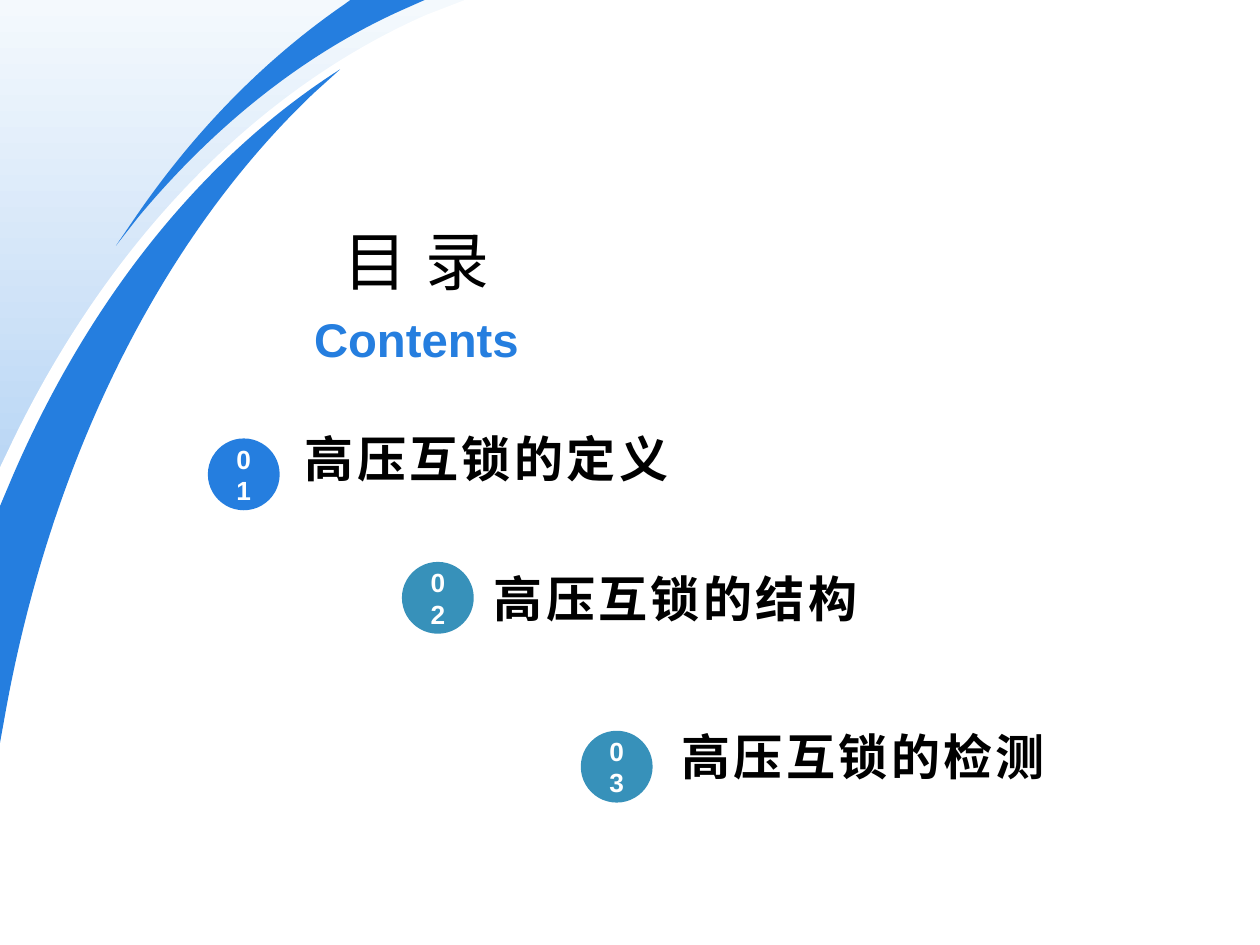
from lxml.etree import SubElement
from pptx import Presentation
from pptx.dml.color import RGBColor
from pptx.enum.shapes import MSO_SHAPE
from pptx.enum.text import MSO_ANCHOR as Anchor, MSO_AUTO_SIZE as AutoSize, PP_ALIGN as Align
from pptx.oxml.ns import qn
from pptx.util import Inches, Pt

# Content: number, colour, circle position, label, label position, label font
BLUE, TEAL, BLACK, WHITE = "257EDF", "3791BA", "000000", "FFFFFF"
LATIN, CJK = "Arial", "Noto Sans CJK SC"
TITLE, SUBTITLE = "目录", "Contents"
ITEMS = [
    ("01", BLUE, (1.65, 3.48), "高压互锁的定义", (2.32, 3.35), LATIN),
    ("02", TEAL, (3.19, 4.46), "高压互锁的结构", (3.82, 4.46), CJK),
    ("03", TEAL, (4.61, 5.80), "高压互锁的检测", (5.31, 5.72), CJK),
]
CIRCLE = 0.57
LABEL_SIZE = (3.15, 0.43)
BACKGROUND = [(0, "F4F9FD"), (74, "9DC5F1"), (83, "9DC5F1"), (100, "BED8F5")]

# Outlines in inches: two numbers are a line end, six are a Bezier curve
WHITE_PAGE = [(3.69, 0), (10.01, 0), (10.01, 7.5), (-0.01, 7.5), (-0.01, 3.73),
              (0.11, 3.48), (0.87, 1.92, 2.02, 0.72, 3.38, 0.12)]
LOWER_SWOOSH = [(2.7, 0.55), (2.49, 0.74), (1.28, 1.89, 0.39, 3.66, 0.03, 5.73),
                (-0.01, 5.95), (-0.01, 4.04), (0.1, 3.78),
                (0.7, 2.39, 1.6, 1.25, 2.7, 0.55)]
UPPER_SWOOSH = [(2.78, 0), (3.37, 0), (3.19, 0.08), (2.41, 0.43, 1.7, 1, 1.1, 1.72),
                (0.92, 1.95), (1.05, 1.76), (1.53, 1.05, 2.1, 0.47, 2.74, 0.03)]
OUTLINES = [(WHITE_PAGE, WHITE), (LOWER_SWOOSH, BLUE), (UPPER_SWOOSH, BLUE)]


def color(value):
    return RGBColor.from_string(value)


def paint(shape, fill):
    shape.shadow.inherit = False
    shape.fill.solid()
    shape.fill.fore_color.rgb = color(fill)
    shape.line.fill.background()


def add_outline(slide, outline):
    """Build a freeform of lines, then bend the steps that are curves."""
    steps = [tuple(map(Inches, step)) for step in outline]
    builder = slide.shapes.build_freeform(*steps[0])
    builder.add_line_segments([step[-2:] for step in steps[1:]], close=True)
    shape = builder.convert_to_shape()
    segments = list(shape._element.iter(qn("a:lnTo")))
    for segment, step in zip(segments, steps[1:]):
        if len(step) == 6:
            curve = SubElement(segment.getparent(), qn("a:cubicBezTo"))
            for x, y in zip(step[::2], step[1::2]):
                SubElement(curve, qn("a:pt"), x=str(x - shape.left), y=str(y - shape.top))
            segment.getparent().replace(segment, curve)
    return shape


def write(shape, text, size, fill, font=LATIN, bold=False, align=Align.LEFT,
          anchor=Anchor.TOP, spacing=0):
    frame = shape.text_frame
    frame.text = text
    frame.word_wrap = True
    frame.auto_size = AutoSize.NONE
    frame.vertical_anchor = anchor
    para = frame.paragraphs[0]
    para.alignment = align
    span = para.runs[0]
    span.font.size = Pt(size)
    span.font.name = font
    span.font.bold = bold
    span.font.color.rgb = color(fill)
    properties = span.font._element
    SubElement(properties, qn("a:ea")).set("typeface", CJK)
    if spacing:
        properties.set("spc", str(spacing * 100))
    return frame


def add_box(slide, left, top, width, height):
    return slide.shapes.add_textbox(*map(Inches, (left, top, width, height)))


def set_background(slide):
    fill = slide.background.fill
    fill.gradient()
    fill.gradient_angle = 270
    stops = slide.element.find(".//" + qn("a:gsLst"))
    for stop in list(stops):
        stops.remove(stop)
    for position, value in BACKGROUND:
        stop = SubElement(stops, qn("a:gs"), pos=str(position * 1000))
        SubElement(stop, qn("a:srgbClr"), val=value)


def main():
    deck = Presentation()
    deck.slide_width, deck.slide_height = Inches(10), Inches(7.5)
    page = deck.slides.add_slide(deck.slide_layouts[5])
    set_background(page)

    # Curved backdrop
    for outline, fill in OUTLINES:
        paint(add_outline(page, outline), fill)

    # Heading, brought in front of the backdrop
    title = page.shapes.title
    page.shapes._spTree.append(title._element)
    title.left, title.top = Inches(2.41), Inches(1.66)
    title.width, title.height = Inches(1.79), Inches(0.76)
    write(title, TITLE, 36.5, BLACK, align=Align.CENTER, anchor=Anchor.BOTTOM, spacing=10)
    subtitle = add_box(page, 2.41, 2.45, 1.79, 0.53)
    frame = write(subtitle, SUBTITLE, 27, BLUE, bold=True, align=Align.CENTER,
                  anchor=Anchor.MIDDLE)
    frame.margin_left = frame.margin_right = Inches(0.05)
    frame.paragraphs[0].line_spacing = 0.9

    # Numbered entries
    for number, fill, (x, y), label, label_at, font in ITEMS:
        circle = page.shapes.add_shape(
            MSO_SHAPE.OVAL, Inches(x), Inches(y), Inches(CIRCLE), Inches(CIRCLE))
        paint(circle, fill)
        write(circle, number, 15, WHITE, bold=True, align=Align.CENTER, anchor=Anchor.MIDDLE)
        box = add_box(page, *label_at, *LABEL_SIZE)
        frame = write(box, label, 28, BLACK, font=font, bold=True, spacing=2)
        frame.margin_bottom = 0

    deck.save("out.pptx")


if __name__ == "__main__":
    main()
